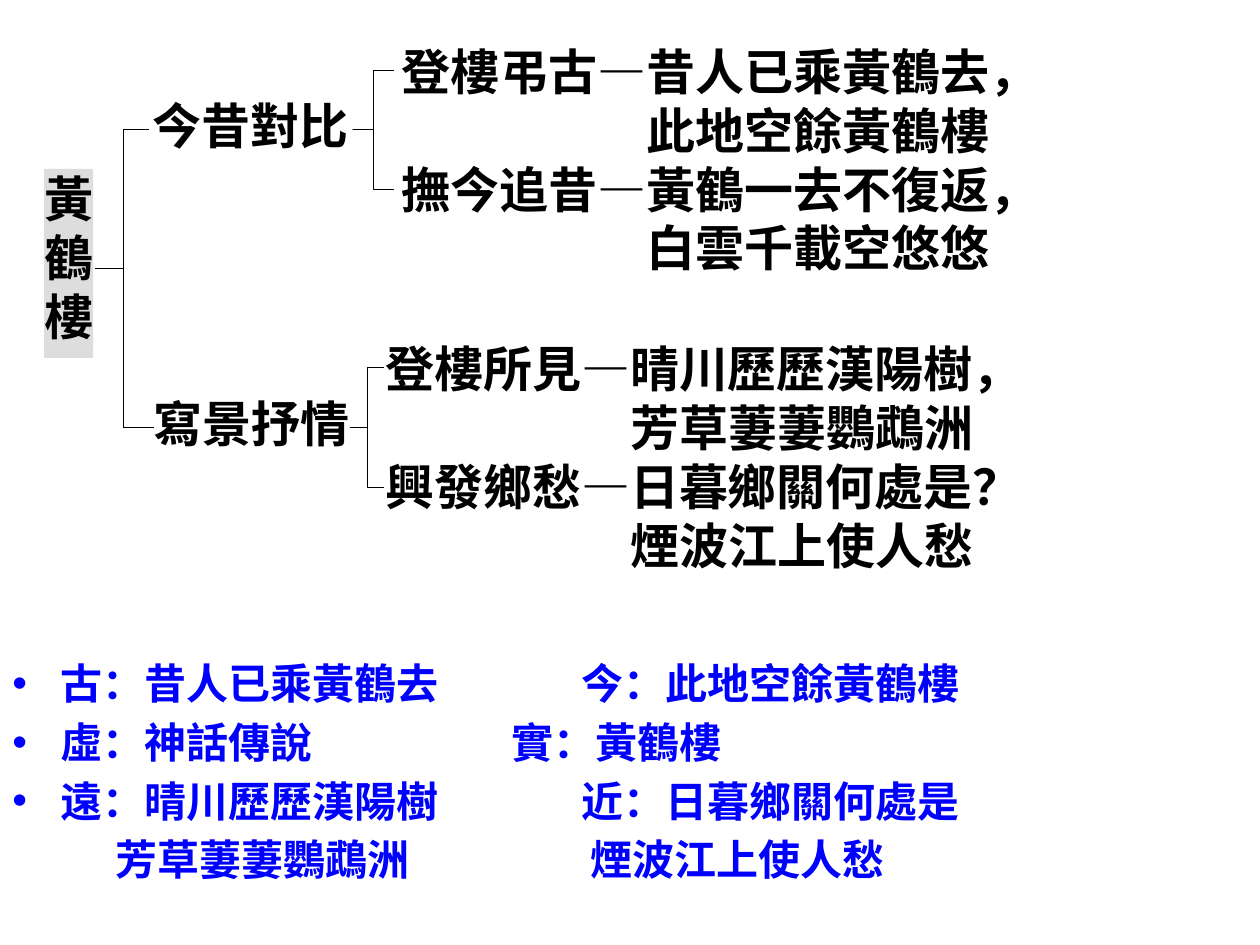
from pptx import Presentation
from pptx.dml.color import RGBColor
from pptx.enum.shapes import MSO_CONNECTOR, MSO_SHAPE
from pptx.enum.text import MSO_ANCHOR, PP_ALIGN
from pptx.oxml.ns import qn
from pptx.util import Inches, Pt
from lxml import etree

BLACK = RGBColor(0x00, 0x00, 0x00)
BLUE = RGBColor(0x00, 0x00, 0xFF)
GREY = RGBColor(0xDD, 0xDD, 0xDD)
STRAIGHT = MSO_CONNECTOR.STRAIGHT
RECTANGLE, LEFT_BRACE = MSO_SHAPE.RECTANGLE, MSO_SHAPE.LEFT_BRACE
TOP, LEFT = MSO_ANCHOR.TOP, PP_ALIGN.LEFT

SANS, SERIF, CJK = "Arial", "Times New Roman", "Noto Sans CJK SC"
TREE_SIZE, CONTRAST_SIZE = 28, 24
LINE_HEIGHT = 1.2
HANG = 0.38
VERSE_INDENT = 5 * TREE_SIZE / 72
SPINE_X = 0.98

BRANCHES = [
    ("今昔對比", SANS, (1.21, 0.76), (2.8, 0.56, 0.33, 0.94), (3.19, 0.33, 6.62, 2.36), [
        ("登樓弔古", "昔人已乘黃鶴去，", "此地空餘黃鶴樓"),
        ("撫今追昔", "黃鶴一去不復返，", "白雲千載空悠悠"),
    ]),
    ("寫景抒情", SERIF, (1.22, 3.12), (2.78, 2.92, 0.27, 0.95), (3.06, 2.69, 6.75, 2.05), [
        ("登樓所見", "晴川歷歷漢陽樹，", "芳草萋萋鸚鵡洲"),
        ("興發鄉愁", "日暮鄉關何處是？", "煙波江上使人愁"),
    ]),
]
TREE_LINES = [
    (SPINE_X, 1.03, SPINE_X, 3.39),
    (SPINE_X, 3.39, 1.22, 3.39),
    (SPINE_X, 1.03, 1.18, 1.03),
    (0.75, 2.13, SPINE_X, 2.13),
]
# Each entry: text, left indent in inches, bulleted
CONTRAST_LEFT = [
    ("古：昔人已乘黃鶴去", HANG, True),
    ("虛：神話傳說", HANG, True),
    ("遠：晴川歷歷漢陽樹", HANG, True),
    ("芳草萋萋鸚鵡洲", 0.82, False),
]
CONTRAST_RIGHT = [
    ("今：此地空餘黃鶴樓", 0.56, False),
    ("實：黃鶴樓", 0, False),
    ("近：日暮鄉關何處是", 0.56, False),
    ("煙波江上使人愁", 0.63, False),
]


def prepare_frame(shape, margins=(0, 0)):
    """Wrap the shape's text from the top with the given side and top margins."""
    frame = shape.text_frame
    frame.word_wrap = True
    frame.vertical_anchor = TOP
    frame.margin_left = frame.margin_right = Inches(margins[0])
    frame.margin_top = frame.margin_bottom = Inches(margins[1])
    return frame


def add_line(frame, runs, size, color, indent=0, bulleted=False, before=0):
    """Write one paragraph from (text, font) runs, reusing an empty first one."""
    first = frame.paragraphs[0]
    paragraph = frame.add_paragraph() if first.runs else first
    paragraph.alignment = LEFT
    paragraph.line_spacing = Pt(size * LINE_HEIGHT)
    paragraph.space_before = Pt(before)
    properties = paragraph._p.get_or_add_pPr()
    properties.set("marL", str(Inches(indent)))
    properties.set("indent", str(-Inches(HANG) if bulleted else 0))
    if bulleted:
        etree.SubElement(properties, qn("a:buFont")).set("typeface", SANS)
        etree.SubElement(properties, qn("a:buChar")).set("char", "•")
    for text, font in runs:
        run = paragraph.add_run()
        run.text = text
        run.font.name = font
        run.font.size = Pt(size)
        run.font.bold = True
        run.font.color.rgb = color


def add_poem_title(slide):
    """Place the poem's title, one character a line, at the root of the tree."""
    title = slide.shapes.add_shape(
        RECTANGLE, Inches(0.35), Inches(1.34), Inches(0.39), Inches(1.5))
    title.shadow.inherit = False
    title.fill.solid()
    title.fill.fore_color.rgb = GREY
    title.line.fill.background()
    add_line(prepare_frame(title), [("黃鶴樓", SERIF)], TREE_SIZE, BLACK)


def add_brace(slide, box):
    """Draw a square-cornered brace that opens a branch."""
    brace = slide.shapes.add_shape(LEFT_BRACE, *map(Inches, box))
    brace.shadow.inherit = False
    brace.adjustments[0] = 0
    brace.adjustments[1] = 0.5
    brace.fill.background()
    brace.line.color.rgb = BLACK
    brace.line.width = Pt(0.5)


def add_branch(slide, theme, font, corner, brace_box, verse_box, couplets):
    """Add a theme, its brace and the couplets that illustrate it."""
    label = slide.shapes.add_textbox(*map(Inches, (*corner, 1.58, 0.74)))
    add_line(prepare_frame(label), [(theme, font)], TREE_SIZE, BLACK)
    add_brace(slide, brace_box)
    verses = prepare_frame(slide.shapes.add_textbox(*map(Inches, verse_box)))
    for topic, opening, closing in couplets:
        add_line(verses, [(topic, SANS), ("—", CJK), (opening, SANS)], TREE_SIZE, BLACK)
        add_line(verses, [(closing, SANS)], TREE_SIZE, BLACK, VERSE_INDENT)


def add_tree_line(slide, ends):
    """Draw one thin line of the tree."""
    connector = slide.shapes.add_connector(STRAIGHT, *map(Inches, ends))
    connector.line.color.rgb = BLACK
    connector.line.width = Pt(0.5)
    etree.SubElement(connector._element.spPr, qn("a:effectLst"))


def add_contrast(slide, left, width, entries):
    """Add one column of the contrasted images."""
    column = slide.shapes.add_textbox(
        Inches(left), Inches(5.17), Inches(width), Inches(2.05))
    frame = prepare_frame(column, (0.1, 0.05))
    for text, indent, bulleted in entries:
        add_line(frame, [(text, CJK)], CONTRAST_SIZE, BLUE, indent, bulleted,
                 before=CONTRAST_SIZE * 0.2)


def main():
    """Build the slide and save it."""
    deck = Presentation()
    deck.slide_width, deck.slide_height = Inches(10), Inches(7.5)
    slide = deck.slides.add_slide(deck.slide_layouts[6])
    add_poem_title(slide)
    for branch in BRANCHES:
        add_branch(slide, *branch)
    for ends in TREE_LINES:
        add_tree_line(slide, ends)
    add_contrast(slide, 0, 3.96, CONTRAST_LEFT)
    add_contrast(slide, 3.96, 6.04, CONTRAST_RIGHT)
    deck.save("out.pptx")


if __name__ == "__main__":
    main()
